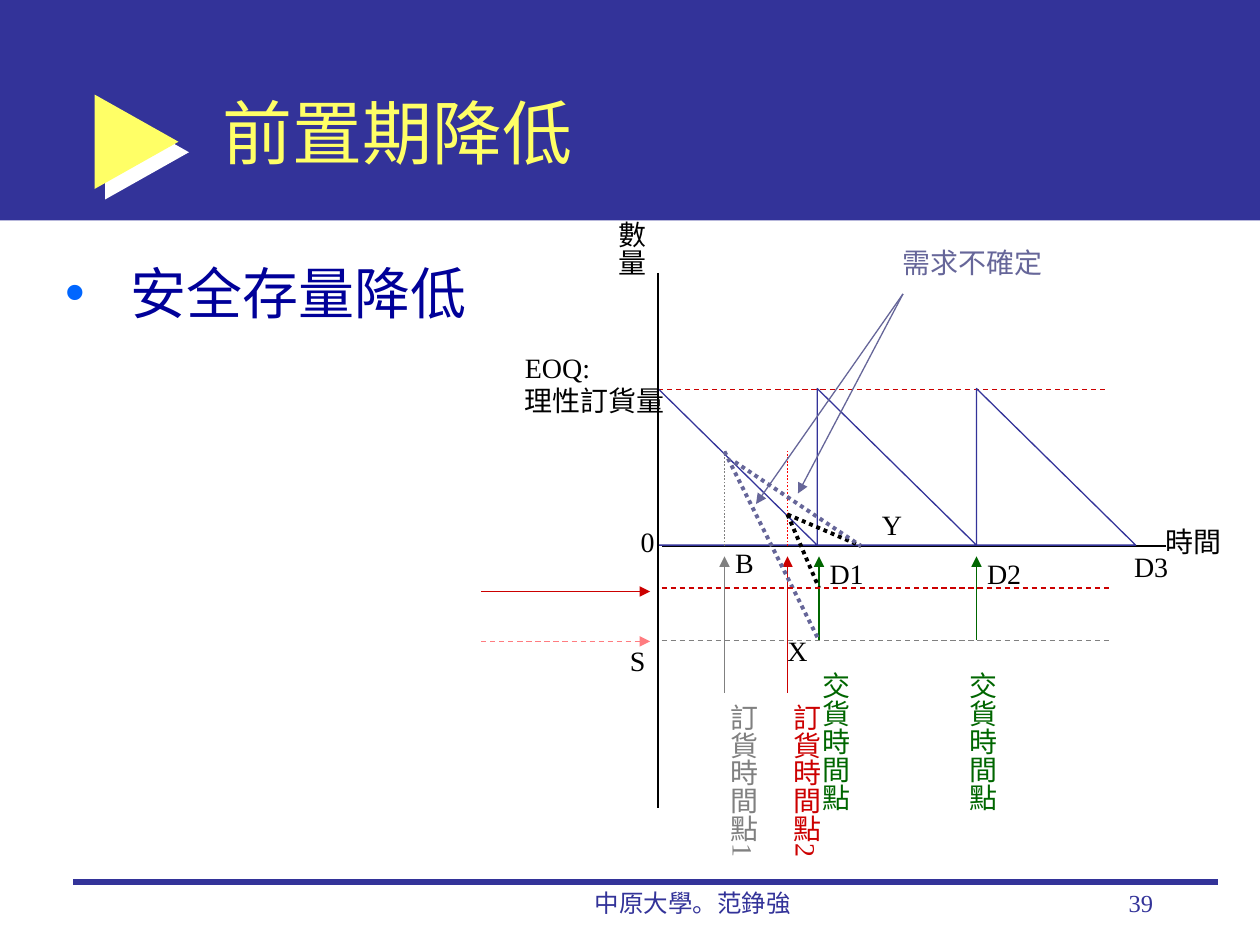
import pptx
import pptx.dml.color
import pptx.enum.dml
import pptx.enum.shapes
import pptx.enum.text
import pptx.oxml.ns
import pptx.util
from lxml import etree

Pt = pptx.util.Pt
RGBColor = pptx.dml.color.RGBColor
Dash = pptx.enum.dml.MSO_LINE
Preset = pptx.enum.shapes.MSO_SHAPE
Align = pptx.enum.text.PP_ALIGN
Anchor = pptx.enum.text.MSO_ANCHOR
AutoSize = pptx.enum.text.MSO_AUTO_SIZE
qn = pptx.oxml.ns.qn

NAVY = RGBColor(0x33, 0x33, 0x99)
YELLOW = RGBColor(0xFF, 0xFF, 0x66)
WHITE = RGBColor(0xFF, 0xFF, 0xFF)
BLACK = RGBColor(0, 0, 0)
BODY_BLUE = RGBColor(0, 0, 0x99)
BULLET_BLUE = RGBColor(0, 0x66, 0xFF)
GREEN = RGBColor(0, 0x66, 0)
CRIMSON = RGBColor(0xCC, 0, 0)
RED = RGBColor(0xFF, 0, 0)
PINK = RGBColor(0xFF, 0x7C, 0x80)
GREY = RGBColor(0x80, 0x80, 0x80)
SLATE = RGBColor(0x66, 0x66, 0x99)


class SlideBuilder:
    font_name = "Times New Roman"
    title_font = "Noto Sans CJK SC"
    label_size = 16

    def __init__(self, slide):
        self.slide = slide
        self.shapes = slide.shapes

    def apply(self, target, values):
        for name, value in values.items():
            setattr(target, name, value)

    def place(self, shape, left, top, width, height):
        self.apply(shape, {"left": Pt(left), "top": Pt(top),
                           "width": Pt(width), "height": Pt(height)})

    def fill_text(self, frame, text, size, color, font=None, align=Align.LEFT):
        frame.text = text
        for paragraph in frame.paragraphs:
            paragraph.alignment = align
            for run in paragraph.runs:
                self.apply(run.font, {"name": font or self.font_name, "size": Pt(size)})
                run.font.color.rgb = color

    def title(self, text, box):
        shape = self.shapes.title
        shape.element.getparent().append(shape.element)
        self.place(shape, *box)
        self.apply(shape.text_frame, {"vertical_anchor": Anchor.MIDDLE,
                                      "auto_size": AutoSize.NONE})
        self.fill_text(shape.text_frame, text, 40, YELLOW, self.title_font)

    def body(self, text, box):
        shape = self.slide.placeholders[1]
        shape.element.getparent().append(shape.element)
        self.place(shape, *box)
        shape.text_frame.auto_size = AutoSize.NONE
        self.fill_text(shape.text_frame, text, 32, BODY_BLUE)
        for paragraph in shape.text_frame.paragraphs:
            properties = paragraph._p.get_or_add_pPr()
            properties.set("marL", str(Pt(37.5)))
            properties.set("indent", str(-Pt(37.5)))
            bullet_color = etree.SubElement(properties, qn("a:buClr"))
            etree.SubElement(bullet_color, qn("a:srgbClr"), val=str(BULLET_BLUE))
            etree.SubElement(properties, qn("a:buChar"), char="•")
            paragraph.space_before = Pt(0)

    def shape(self, preset, box, fill=None, line=None):
        shape = self.shapes.add_shape(preset, *(Pt(value) for value in box))
        shape.shadow.inherit = False
        if fill is None:
            shape.fill.background()
        else:
            shape.fill.solid()
            shape.fill.fore_color.rgb = fill
        if line is None:
            shape.line.fill.background()
        else:
            shape.line.color.rgb = line
            shape.line.width = Pt(0.75)
        return shape

    def hard_shadow(self, shape, color, distance):
        effects = shape.element.spPr.find(qn("a:effectLst"))
        shadow = etree.SubElement(effects, qn("a:outerShdw"), blurRad="0",
                                  dist=str(Pt(distance)), dir="2700000",
                                  algn="ctr", rotWithShape="0")
        etree.SubElement(shadow, qn("a:srgbClr"), val=str(color))

    def line(self, start, end, color, width=0.75, dash=None, arrow=None):
        connector = self.shapes.add_connector(
            pptx.enum.shapes.MSO_CONNECTOR.STRAIGHT,
            *(Pt(value) for value in start + end))
        connector.line.color.rgb = color
        self.apply(connector.line, {"width": Pt(width), "dash_style": dash})
        properties = connector.element.spPr
        if arrow:
            etree.SubElement(properties.find(qn("a:ln")), qn(f"a:{arrow}End"),
                             type="triangle")
        etree.SubElement(properties, qn("a:effectLst"))

    def footer(self, text, box, align):
        shape = self.shapes.add_textbox(*(Pt(value) for value in box))
        shape.text_frame.word_wrap = True
        self.fill_text(shape.text_frame, text, 14, NAVY, align=align)

    def label(self, text, box, color=BLACK, vertical=False):
        shape = self.shapes.add_textbox(*(Pt(value) for value in box))
        frame = shape.text_frame
        self.apply(frame, {"margin_left": 0, "margin_top": 0, "margin_right": 0,
                           "margin_bottom": 0, "word_wrap": False,
                           "auto_size": AutoSize.SHAPE_TO_FIT_TEXT})
        if vertical:
            frame._txBody.bodyPr.set("vert", "eaVert")
        self.fill_text(frame, text, self.label_size, color)


def main():
    presentation = pptx.Presentation()
    presentation.slide_width, presentation.slide_height = Pt(720), Pt(540)
    slide = presentation.slides.add_slide(presentation.slide_layouts[1])
    builder = SlideBuilder(slide)

    # Header band, marker and footer
    builder.shape(Preset.RECTANGLE, (0, 0, 720, 126), NAVY)
    marker = builder.shape(Preset.RIGHT_ARROW, (54, 54, 48, 54), YELLOW)
    marker.adjustments[0], marker.adjustments[1] = 0.38, 1
    builder.hard_shadow(marker, WHITE, 8.5)
    builder.line((42, 504), (696, 504), NAVY, 3)
    builder.footer("中原大學。范錚強", (282, 504, 228, 36), Align.CENTER)
    builder.footer("39", (516, 504, 150, 36), Align.RIGHT)

    # Title and list
    builder.title("前置期降低", (120, 30, 546, 90))
    builder.body("安全存量降低", (30, 144, 276, 150))

    # Axes and order quantity level
    axis_x, axis_y = 376, 312
    builder.label("數量", (351, 126, 19.2, 32), vertical=True)
    builder.label("EOQ:\n理性訂貨量", (300, 200, 80, 38.4))
    builder.line((378, axis_y), (666, axis_y), BLACK)
    builder.line((axis_x, 222.4), (631.5, 222.4), CRIMSON, dash=Dash.DASH)

    # Stock cycles
    cycle = 91
    for index in range(3):
        builder.shape(Preset.RIGHT_TRIANGLE,
                      (axis_x + cycle * index, 222, cycle, 89.5), line=NAVY)
    builder.line((axis_x, 156), (axis_x, 462), BLACK)

    # Delivery times
    for arrow_x, text_x in ((468, 468), (558, 552)):
        builder.line((arrow_x, 318), (arrow_x, 366), GREEN, arrow="head")
        builder.label("交貨時間點", (text_x, 384, 19.2, 80), GREEN, True)

    # Point labels
    for text, left, top, width in (
            ("時間", 666, 300, 32), ("0", 366, 300, 8), ("D1", 474, 318, 19.5),
            ("D2", 564, 318, 19.5), ("D3", 648, 314, 19.5), ("B", 420, 312, 10.7),
            ("Y", 504, 290, 11.5), ("X", 450, 362, 11.5), ("S", 360, 368, 8.9)):
        builder.label(text, (left, top, width, 19.2))

    # Order times before and after the shorter lead time
    for number, left, color, guide in ((1, 414, GREY, GREY), (2, 450, CRIMSON, RED)):
        builder.line((left, 318), (left, 396), color, arrow="head")
        builder.label(f"訂貨時間點{number}", (left + 1.5, 402, 19.2, 88), color, True)
        builder.line((left, axis_y), (left, 258), guide, 1, Dash.ROUND_DOT)

    # Range of demand during each lead time
    for start, end, color in (
            ((450, 294), (468, 336), BLACK), ((450, 294), (492, 312), BLACK),
            ((420, 264), (492, 312), SLATE), ((414, 258), (468, 366), SLATE)):
        builder.line(start, end, color, 2.25, Dash.ROUND_DOT)

    # Safety stock levels
    for level, color in ((336, CRIMSON), (366, GREY)):
        builder.line((378, level), (633.5, level), color, dash=Dash.DASH)
    for level, color, dash in ((338, CRIMSON, None), (366.5, PINK, Dash.DASH)):
        builder.line((275, level), (371.5, level), color, dash=dash, arrow="tail")

    # Uncertain demand callout
    for target in ((456, 282), (432, 288)):
        builder.line(target, (516, 168), SLATE, arrow="head")
    builder.label("需求不確定", (516, 140.5, 80, 19.2), SLATE)

    presentation.save("out.pptx")


if __name__ == "__main__":
    main()
